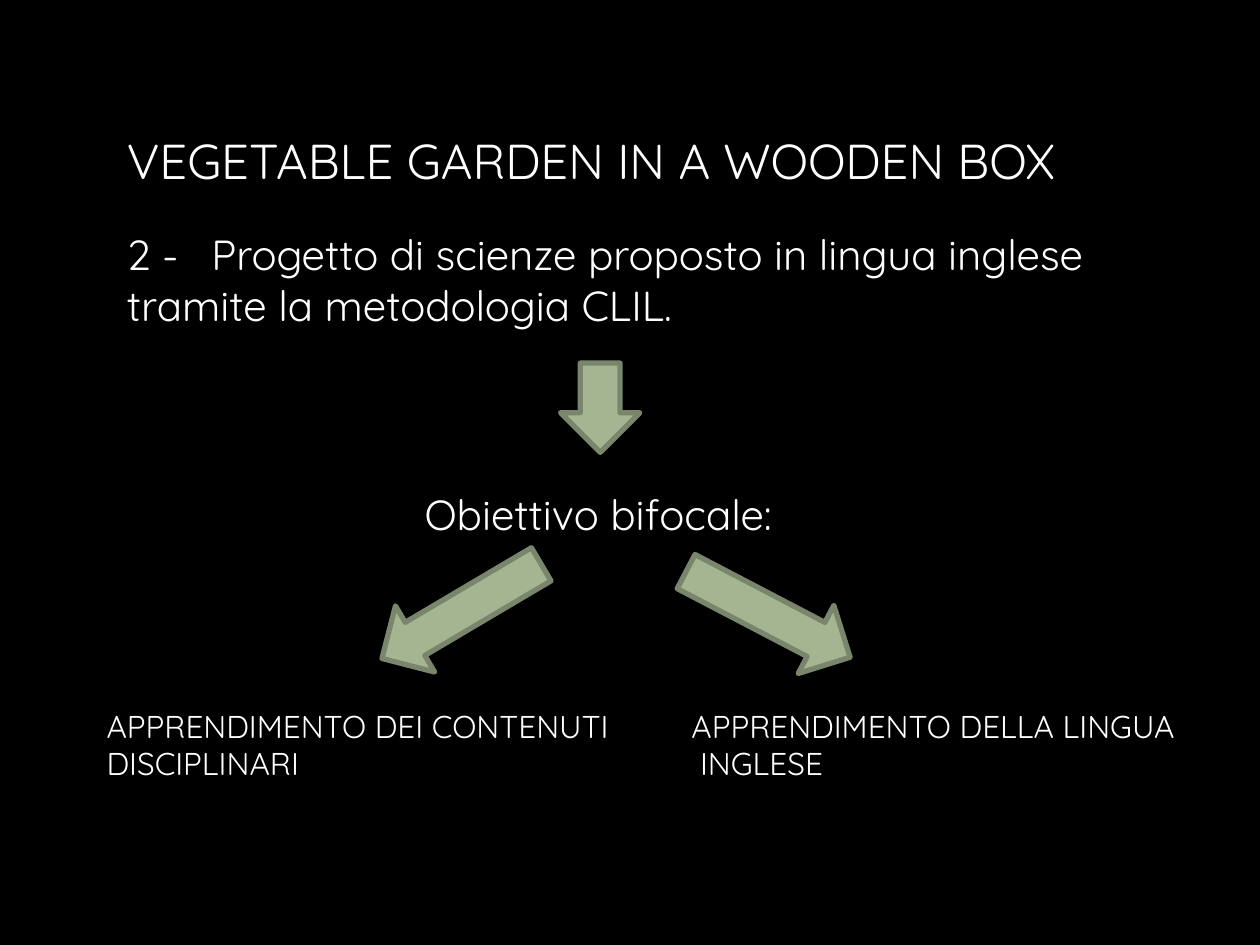
"""Build the slide on the vegetable garden project and its two goals."""
from lxml import etree
from pptx import Presentation
from pptx import util as u
from pptx.dml.color import RGBColor
from pptx.enum import shapes
from pptx.oxml.ns import qn

COLORS = {"background": "000000", "text": "FFFFFF", "arrow": "A5B592", "outline": "7A866C"}
FONT = "Quicksand"


def color(name):
    return RGBColor.from_string(COLORS[name])


def add_tab_stop(paragraph, position):
    properties = paragraph._p.get_or_add_pPr()
    tab_list = etree.SubElement(properties, qn("a:tabLst"))
    etree.SubElement(tab_list, qn("a:tab"), pos=str(int(position)), algn="l")


def write(paragraph, content, size=18, space_before=0, tab_stop=None):
    paragraph.space_before = u.Pt(space_before)
    if tab_stop:
        add_tab_stop(paragraph, tab_stop)
    run = paragraph.add_run()
    run.text = content
    run.font.name = FONT
    run.font.size = u.Pt(size)
    run.font.color.rgb = color("text")


def add_text(slide, left, top, width, height, lines):
    box = slide.shapes.add_textbox(u.Cm(left), u.Cm(top), u.Cm(width), u.Cm(height))
    frame = box.text_frame
    frame.word_wrap = True
    for index, (content, options) in enumerate(lines):
        paragraph = frame.add_paragraph() if index else frame.paragraphs[0]
        write(paragraph, content, **options)


def add_arrow(slide, left, top, width, height, rotation=0):
    arrow = slide.shapes.add_shape(
        shapes.MSO_SHAPE.DOWN_ARROW, u.Cm(left), u.Cm(top), u.Cm(width), u.Cm(height))
    arrow.rotation = rotation
    arrow.shadow.inherit = False
    arrow.fill.solid()
    arrow.fill.fore_color.rgb = color("arrow")
    arrow.line.color.rgb = color("outline")
    arrow.line.width = u.Pt(3)


def main():
    presentation = Presentation()
    presentation.slide_width, presentation.slide_height = u.Cm(25.4), u.Cm(19.05)
    slide = presentation.slides.add_slide(presentation.slide_layouts[6])
    slide.background.fill.solid()
    slide.background.fill.fore_color.rgb = color("background")

    add_text(slide, 2.31, 2.51, 19.96, 10.69, [
        ("VEGETABLE GARDEN IN A WOODEN BOX", {"size": 28}),
        ("2 -\tProgetto di scienze proposto in lingua inglese tramite la metodologia CLIL.",
         {"size": 24, "space_before": 22.5, "tab_stop": u.Cm(1.7)}),
    ])
    add_arrow(slide, 11.3, 7.32, 1.6, 1.8)
    add_text(slide, 8.31, 9.73, 8.26, 2.31, [("Obiettivo bifocale:", {"size": 24})])
    add_arrow(slide, 8.53, 10.46, 1.55, 3.73, rotation=59.4)
    add_arrow(slide, 14.71, 10.52, 1.55, 3.73, rotation=297.6)

    goals = [
        (1.9, 10.8, "APPRENDIMENTO DEI CONTENUTI", "DISCIPLINARI"),
        (13.69, 10.44, "APPRENDIMENTO DELLA LINGUA", " INGLESE"),
    ]
    for left, width, *lines in goals:
        add_text(slide, left, 14.12, width, 1.8, [(line, {}) for line in lines])

    presentation.save("out.pptx")


if __name__ == "__main__":
    main()
